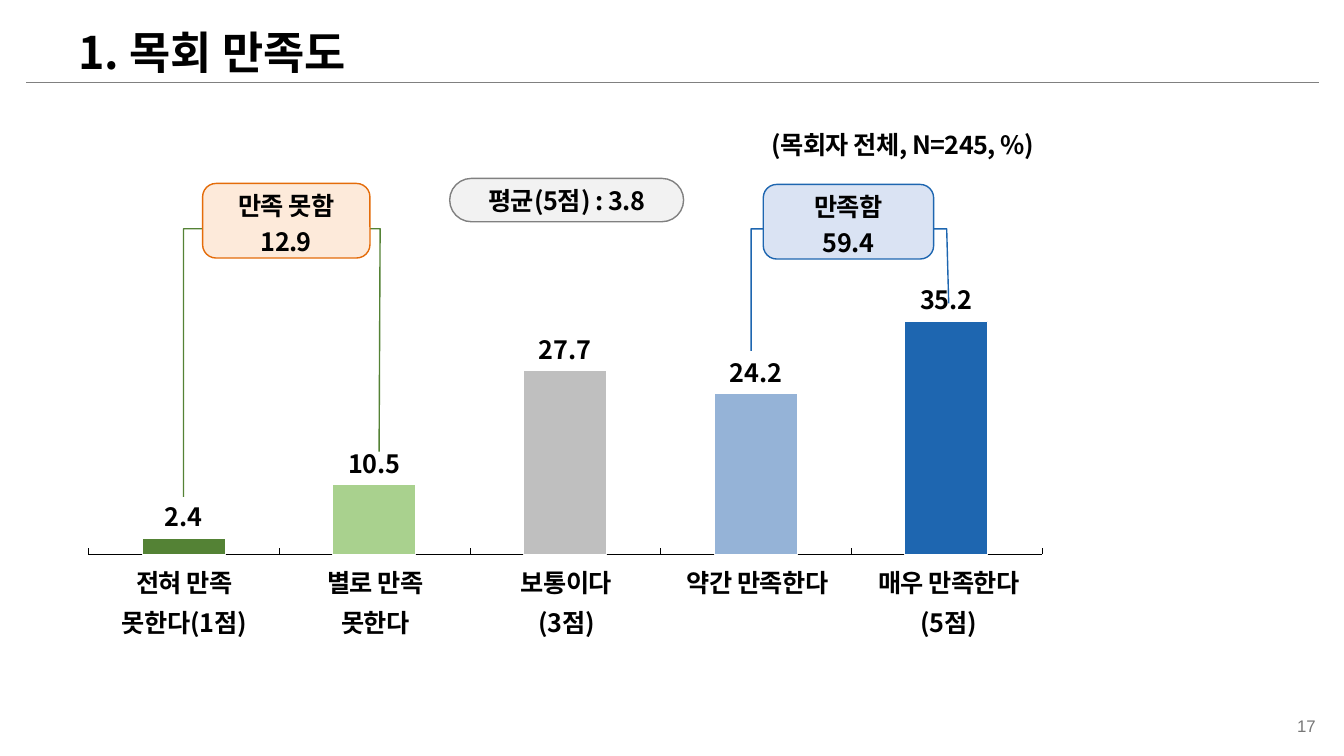
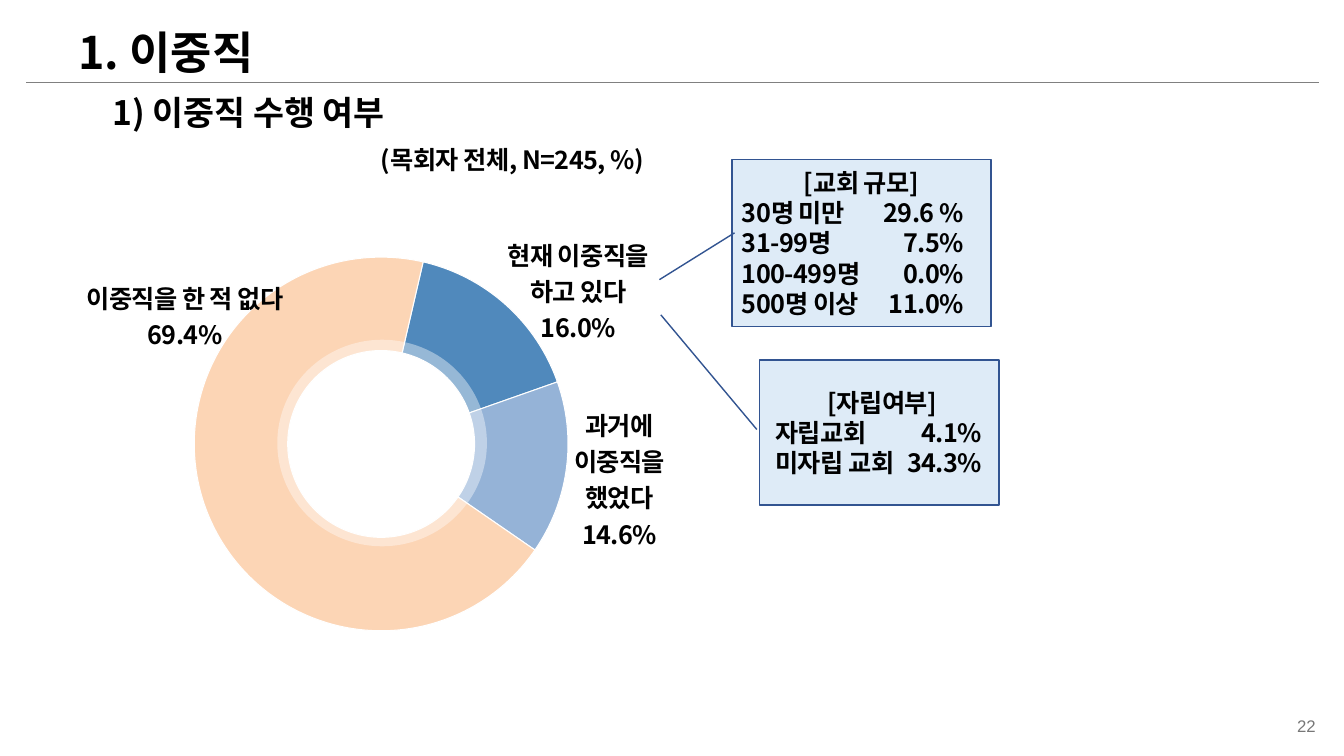
from dataclasses import dataclass
from typing import Optional

from lxml.etree import SubElement
from pptx import Presentation
from pptx.chart.data import CategoryChartData
from pptx.dml.color import RGBColor
from pptx.enum.chart import XL_CHART_TYPE, XL_LABEL_POSITION, XL_TICK_LABEL_POSITION, XL_TICK_MARK
from pptx.enum.shapes import MSO_CONNECTOR, MSO_SHAPE
from pptx.enum.text import MSO_ANCHOR, MSO_AUTO_SIZE, PP_ALIGN
from pptx.oxml import parse_xml
from pptx.oxml.ns import nsdecls, qn
from pptx.util import Inches, Pt

FONT = "Noto Sans CJK KR"
COLORS = {
    "text": "000000", "white": "FFFFFF", "gray": "808080", "page": "777777",
    "dark_green": "548235", "light_green": "A9D18E", "silver": "BFBFBF",
    "light_blue": "95B3D7", "blue": "1E66B0", "steel": "5089BC", "peach": "FCD5B5",
    "orange": "E46C0A", "pale_orange": "FDEADA", "pale_blue": "DAE3F3",
    "pale_gray": "F2F2F2", "callout": "DEEBF7", "callout_line": "325491",
}
LEFT, CENTER, RIGHT = PP_ALIGN.LEFT, PP_ALIGN.CENTER, PP_ALIGN.RIGHT


@dataclass(frozen=True)
class Frame:
    left: float
    top: float
    width: float
    height: float

    def lengths(self):
        return [Inches(value) for value in (self.left, self.top, self.width, self.height)]


@dataclass(frozen=True)
class Badge:
    frame: Frame
    lines: tuple
    fill: str
    line: str
    corner: float
    spacing: Optional[float] = None


@dataclass(frozen=True)
class Callout:
    frame: Frame
    heading: str
    rows: tuple
    adjustments: tuple
    inset: float
    tab: float


@dataclass(frozen=True)
class Label:
    frame: Frame
    lines: tuple


@dataclass(frozen=True)
class Bracket:
    points: tuple
    color: str


BARS = (  # value, colour, caption lines
    (2.4, "dark_green", ("전혀 만족", "못한다(1점)")),
    (10.5, "light_green", ("별로 만족", "못한다")),
    (27.7, "silver", ("보통이다", "(3점)")),
    (24.2, "light_blue", ("약간 만족한다",)),
    (35.2, "blue", ("매우 만족한다", "(5점)")),
)
BRACKETS = (
    Bracket(((1.82, 4.93), (1.82, 2.27), (3.77, 2.27), (3.76, 4.48)), "dark_green"),
    Bracket(((7.45, 3.48), (7.45, 2.27), (9.39, 2.27), (9.41, 3.01)), "blue"),
)
BADGES = (
    Badge(Frame(2.01, 1.82, 1.66, 0.74), ("만족 못함", "12.9"), "pale_orange", "orange", 0.18, 1.2),
    Badge(Frame(7.57, 1.83, 1.69, 0.74), ("만족함", "59.4"), "pale_blue", "blue", 0.18, 1.2),
    Badge(Frame(4.46, 1.77, 2.32, 0.43), ("평균(5점) : 3.8",), "pale_gray", "gray", 0.5),
)
SLICES = ((16, "steel"), (15, "light_blue"), (69, "peach"))
SLICE_LABELS = (
    Label(Frame(4.85, 2.27, 1.77, 1.19), ("현재 이중직을", "하고 있다", "16.0%")),
    Label(Frame(0.62, 2.7, 2.43, 0.83), ("이중직을 한 적 없다", "69.4%")),
    Label(Frame(5.55, 3.96, 1.19, 1.56), ("과거에", "이중직을", "했었다", "14.6%")),
)
CALLOUTS = (
    Callout(Frame(7.26, 1.58, 2.57, 1.66), "[교회 규모]",
            (("30명 미만", "29.6 %"), ("31-99명", "7.5%"),
             ("100-499명", "0.0%"), ("500명 이상", "11.0%")),
            (0.44, 0.01, 0.72, -0.28), 0.1, 2.2),
    Callout(Frame(7.53, 3.57, 2.38, 1.44), "[자립여부]",
            (("자립교회", "4.1%"), ("미자립 교회", "34.3%")),
            (0.48, -0.01, -0.31, -0.41), 0.16, 2.05),
)


def rgb(name: str) -> RGBColor:
    return RGBColor.from_string(COLORS[name])


def write(text_frame, lines, *, size=18, bold=True, color="text", font=FONT, align=LEFT,
          spacing=None, tracking=-40, anchor=MSO_ANCHOR.TOP, insets=None):
    """Write one paragraph for each line, all in one format."""
    text_frame.vertical_anchor = anchor
    if insets is not None:
        (text_frame.margin_left, text_frame.margin_top,
         text_frame.margin_right, text_frame.margin_bottom) = map(Inches, insets)
    for index, line in enumerate(lines):
        paragraph = text_frame.add_paragraph() if index else text_frame.paragraphs[0]
        paragraph.alignment = align
        if spacing:
            paragraph.line_spacing = spacing
        run = paragraph.add_run()
        run.text = line
        run.font.size, run.font.bold, run.font.name = Pt(size), bold, font
        run.font.color.rgb = rgb(color)
        properties = run.font._element
        properties.set("spc", str(tracking))
        SubElement(properties, qn("a:ea"), typeface=font)


def add_text(slide, frame: Frame, *lines: str, **text_format):
    text_frame = slide.shapes.add_textbox(*frame.lengths()).text_frame
    text_frame.word_wrap = False
    text_frame.auto_size = MSO_AUTO_SIZE.SHAPE_TO_FIT_TEXT
    write(text_frame, lines, **text_format)


def set_style(shape, fill: Optional[str], line: str, width: float = 1):
    shape.shadow.inherit = False
    if fill:
        shape.fill.solid()
        shape.fill.fore_color.rgb = rgb(fill)
    else:
        shape.fill.background()
    shape.line.color.rgb = rgb(line)
    shape.line.width = Pt(width)


def add_shape(slide, preset, frame: Frame, adjustments, fill, line, width=1):
    shape = slide.shapes.add_shape(preset, *frame.lengths())
    for index, value in enumerate(adjustments):
        shape.adjustments[index] = value
    set_style(shape, fill, line, width)
    return shape


def add_base_slide(presentation, title: str, title_width: float, page: str):
    """Blank slide with the page number, rule and title."""
    slide = presentation.slides.add_slide(presentation.slide_layouts[6])
    number = slide.shapes.add_textbox(*Frame(12.45, 7.05, 0.67, 0.3).lengths())
    write(number.text_frame, [page], size=12, bold=False, color="page", font="Arial", align=RIGHT,
          tracking=0, anchor=MSO_ANCHOR.BOTTOM, insets=(0.02, 0.05, 0.07, 0.05))
    rule = slide.shapes.add_connector(MSO_CONNECTOR.STRAIGHT, Inches(0.26), Inches(0.82),
                                      Inches(13.08), Inches(0.82))
    rule.line.color.rgb = rgb("gray")
    rule.line.width = Pt(1)
    SubElement(rule._element.spPr, qn("a:effectLst"))
    add_text(slide, Frame(0.68, 0.2, title_width, 0.64), title, size=32, tracking=0)
    return slide


def add_chart(slide, kind, frame: Frame, values, colors, layout: Frame):
    """Chart with one colour per point and a fixed inner plot area."""
    data = CategoryChartData()
    data.categories = [str(index + 1) for index in range(len(values))]
    data.add_series("Series 1", values)
    chart = slide.shapes.add_chart(kind, *frame.lengths(), data).chart
    chart.has_legend = chart.has_title = False
    chart.font.name, chart.font.size = FONT, Pt(18)
    chart.font.color.rgb = rgb("text")
    for index, color in enumerate(colors):
        point = chart.plots[0].series[0].points[index].format
        point.fill.solid()
        point.fill.fore_color.rgb = rgb(color)
        point.line.color.rgb = rgb("white")
        point.line.width = Pt(0.75)
    plot_area = chart._chartSpace.chart.plotArea
    for old_layout in plot_area.findall(qn("c:layout")):
        plot_area.remove(old_layout)
    plot_area.insert(0, parse_xml(
        f'<c:layout {nsdecls("c")}><c:manualLayout><c:layoutTarget val="inner"/>'
        f'<c:xMode val="edge"/><c:yMode val="edge"/><c:x val="{layout.left}"/>'
        f'<c:y val="{layout.top}"/><c:w val="{layout.width}"/><c:h val="{layout.height}"/>'
        '</c:manualLayout></c:layout>'))
    return chart


def add_bar_chart(slide):
    values, colors, _ = zip(*BARS)
    chart = add_chart(slide, XL_CHART_TYPE.COLUMN_CLUSTERED, Frame(0.68, 1.88, 9.85, 3.73),
                      values, colors, Frame(0.02, 0.09, 0.96, 0.88))
    plot = chart.plots[0]
    plot.gap_width, plot.overlap, plot.vary_by_categories = 130, -5, False
    plot.has_data_labels = True
    labels = plot.data_labels
    labels.show_value = True
    labels.position = XL_LABEL_POSITION.OUTSIDE_END
    labels.number_format, labels.number_format_is_linked = "0.0", False
    labels.font.name, labels.font.size, labels.font.bold = FONT, Pt(18), True
    labels.font.color.rgb = rgb("text")
    category_axis, value_axis = chart.category_axis, chart.value_axis
    for axis in (category_axis, value_axis):
        axis.tick_label_position = XL_TICK_LABEL_POSITION.NONE
        axis.has_major_gridlines = False
    category_axis.major_tick_mark = XL_TICK_MARK.INSIDE
    category_axis.format.line.color.rgb = rgb("text")
    category_axis.format.line.width = Pt(0.25)
    value_axis.minimum_scale, value_axis.maximum_scale = 0, 50
    value_axis.format.line.fill.background()


def add_captions(slide):
    """Borderless table row, tall enough for two caption lines."""
    table = slide.shapes.add_table(1, len(BARS), *Frame(0.88, 5.54, 9.48, 0.9).lengths()).table
    table.first_row = table.horz_banding = False
    for cell, (_, _, lines) in zip(table.rows[0].cells, BARS):
        cell.margin_left = cell.margin_top = cell.margin_right = Inches(0.01)
        cell.margin_bottom = 0
        write(cell.text_frame, lines, align=CENTER, spacing=1.1)
        cell_properties = cell._tc.get_or_add_tcPr()
        for side in ("a:lnL", "a:lnR", "a:lnT", "a:lnB"):
            SubElement(SubElement(cell_properties, qn(side), w="0"), qn("a:noFill"))
        cell.fill.background()


def add_bracket(slide, bracket: Bracket):
    start, *rest = [(Inches(x), Inches(y)) for x, y in bracket.points]
    builder = slide.shapes.build_freeform(*start)
    builder.add_line_segments(rest, close=False)
    set_style(builder.convert_to_shape(), None, bracket.color)


def add_badge(slide, badge: Badge):
    shape = add_shape(slide, MSO_SHAPE.ROUNDED_RECTANGLE, badge.frame, [badge.corner],
                      badge.fill, badge.line)
    write(shape.text_frame, badge.lines, align=CENTER, spacing=badge.spacing,
          anchor=MSO_ANCHOR.MIDDLE, insets=(0, 0, 0, 0))


def add_callout(slide, callout: Callout):
    shape = add_shape(slide, MSO_SHAPE.LINE_CALLOUT_1, callout.frame, callout.adjustments,
                      "callout", "callout_line")
    lines = [callout.heading, *("\t".join(row) for row in callout.rows)]
    write(shape.text_frame, lines, anchor=MSO_ANCHOR.MIDDLE,
          insets=(callout.inset, 0.05, 0.1, 0.05))
    heading, *rows = shape.text_frame.paragraphs
    heading.alignment = CENTER
    for paragraph in rows:  # values end at a right tab stop
        tabs = SubElement(paragraph._p.get_or_add_pPr(), qn("a:tabLst"))
        SubElement(tabs, qn("a:tab"), pos=str(Inches(callout.tab)), algn="r")


def add_doughnut(slide):
    values, colors = zip(*SLICES)
    chart = add_chart(slide, XL_CHART_TYPE.DOUGHNUT, Frame(1.84, 2.39, 3.92, 4.03),
                      values, colors, Frame(0.02, 0.04, 0.95, 0.92))
    doughnut = chart.plots[0]._element
    doughnut.find(qn("c:firstSliceAng")).set("val", "13")
    doughnut.find(qn("c:holeSize")).set("val", "48")
    # Translucent inner ring
    ring = add_shape(slide, MSO_SHAPE.OVAL, Frame(2.82, 3.44, 1.94, 1.91), (), None, "white", 10)
    ring_color = ring.line._ln.find(qn("a:solidFill")).find(qn("a:srgbClr"))
    SubElement(ring_color, qn("a:alpha"), val="40000")


def build_satisfaction(presentation):
    slide = add_base_slide(presentation, "1. 목회 만족도", 3.14, "17")
    add_bar_chart(slide)
    add_captions(slide)
    for bracket in BRACKETS:
        add_bracket(slide, bracket)
    for badge in BADGES:
        add_badge(slide, badge)
    add_text(slide, Frame(7.55, 1.23, 2.99, 0.4), "(목회자 전체, N=245, %)")


def build_second_job(presentation):
    slide = add_base_slide(presentation, "1. 이중직", 2.08, "22")
    add_doughnut(slide)
    for label in SLICE_LABELS:
        add_text(slide, label.frame, *label.lines, align=CENTER, spacing=1.2)
    add_text(slide, Frame(3.68, 1.38, 3.07, 0.4), "(목회자 전체, N=245, %)")
    for callout in CALLOUTS:
        add_callout(slide, callout)
    add_text(slide, Frame(1.02, 0.86, 3.23, 0.5), "1) 이중직 수행 여부", size=24, tracking=0)


def main():
    presentation = Presentation()
    presentation.slide_width, presentation.slide_height = Inches(13.33), Inches(7.5)
    build_satisfaction(presentation)
    build_second_job(presentation)
    presentation.save("out.pptx")


if __name__ == "__main__":
    main()
